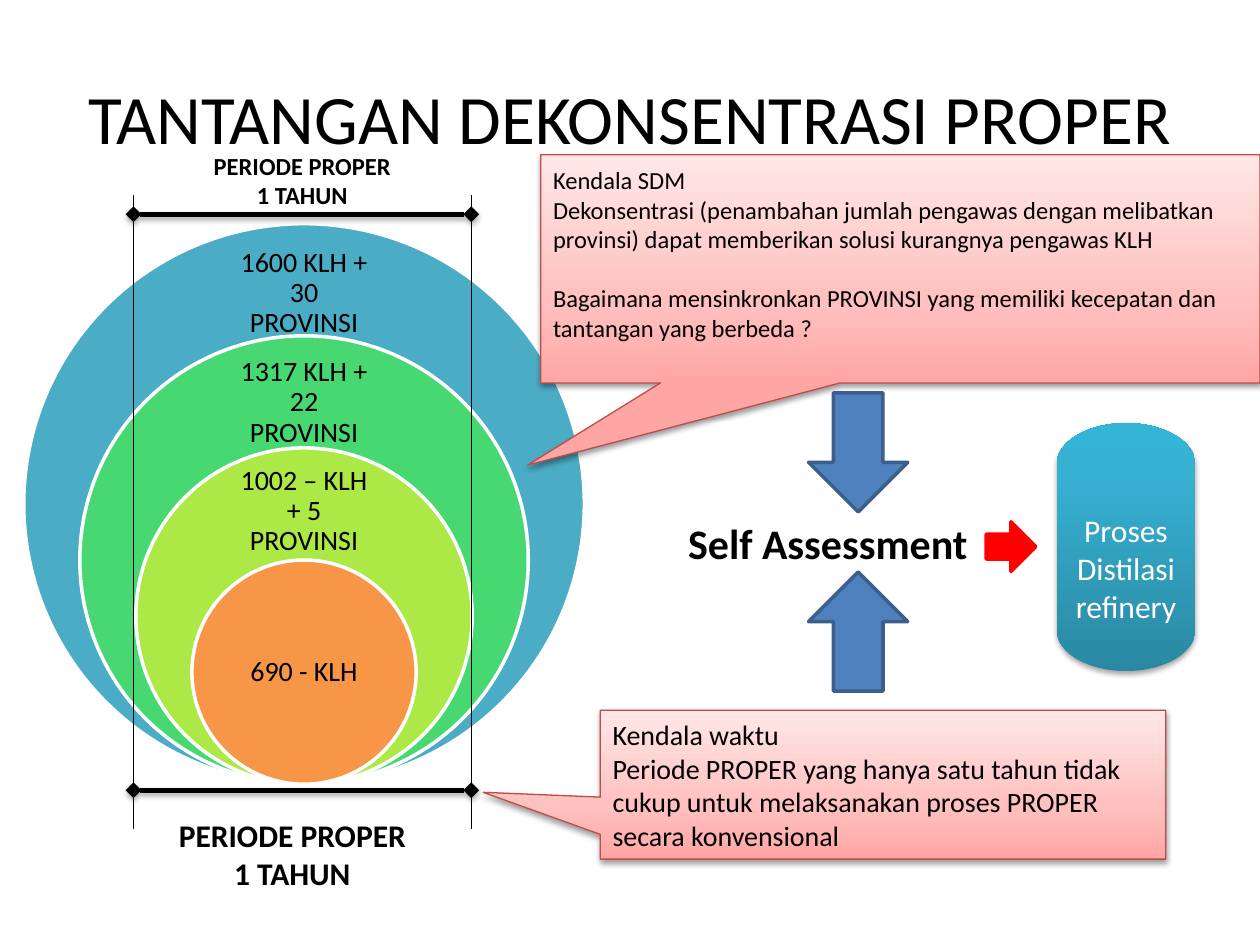
from lxml import etree
from pptx import Presentation
from pptx.dml.color import RGBColor
from pptx.enum.shapes import MSO_CONNECTOR, MSO_SHAPE
from pptx.enum.text import MSO_ANCHOR, PP_ALIGN
from pptx.oxml import parse_xml
from pptx.oxml.ns import nsdecls, qn
from pptx.util import Cm, Pt

OVAL = MSO_SHAPE.OVAL
CALLOUT = MSO_SHAPE.RECTANGULAR_CALLOUT
DISK = MSO_SHAPE.FLOWCHART_MAGNETIC_DISK
DOWN, RIGHT = MSO_SHAPE.DOWN_ARROW, MSO_SHAPE.RIGHT_ARROW
STRAIGHT = MSO_CONNECTOR.STRAIGHT
MIDDLE, TOP = MSO_ANCHOR.MIDDLE, MSO_ANCHOR.TOP
LEFT, CENTER = PP_ALIGN.LEFT, PP_ALIGN.CENTER


class Theme:
    font = "Calibri"
    black, white, red = "000000", "FFFFFF", "FF0000"
    rings = ("4BACC6", "47D872", "ACE946", "F79646")
    blue, navy, rose = "4F81BD", "3A5F8C", "BF4C48"
    pink = ((0, "FFA6A5"), (35, "FFC0BF"), (100, "FFE7E7"))
    teal = ((0, "2A88A2"), (80, "37B1D2"), (100, "34B4D6"))
    title, head, large, body, small = 39.6, 24, 18, 16, 14


def write(shape, text, size=Theme.body, color=Theme.black, bold=False, align=CENTER,
          anchor=MIDDLE, inset=None, spacing=None):
    """Put text in a shape, one paragraph for each line."""
    frame = shape.text_frame
    frame.word_wrap = True
    frame.vertical_anchor = anchor
    if inset is not None:
        frame.margin_left = frame.margin_right = Cm(inset)
        frame.margin_top = frame.margin_bottom = Cm(inset)
    frame.text = text
    for para in frame.paragraphs:
        para.alignment = align
        para.line_spacing = spacing
        font = para.runs[0].font
        font.name, font.size, font.bold = Theme.font, Pt(size), bold
        font.color.rgb = RGBColor.from_string(color)
    return frame


def draw(kind, box, fill, line=None, width=2, shade=None):
    """Add a shape with a plain or graded fill and an optional shadow."""
    shape = slide.shapes.add_shape(kind, *map(Cm, box))
    shape.shadow.inherit = False
    if isinstance(fill, str):
        shape.fill.solid()
        shape.fill.fore_color.rgb = RGBColor.from_string(fill)
    else:
        shape.fill.gradient()
        shape.fill.gradient_angle = 90
        stops = shape._element.spPr.find(".//" + qn("a:gsLst"))
        for stop in list(stops):
            stops.remove(stop)
        for pos, color in fill:
            stop = etree.SubElement(stops, qn("a:gs"), pos=str(pos * 1000))
            etree.SubElement(stop, qn("a:srgbClr"), val=color)
    if line:
        shape.line.color.rgb = RGBColor.from_string(line)
        shape.line.width = Pt(width)
    else:
        shape.line.fill.background()
    if shade:
        shape._element.spPr.find(qn("a:effectLst")).append(parse_xml(SHADOW % shade))
    return shape


SHADOW = (f'<a:outerShdw {nsdecls("a")} blurRad="40000" dist="%d" dir="5400000" '
          'rotWithShape="0"><a:srgbClr val="000000"><a:alpha val="%d"/>'
          '</a:srgbClr></a:outerShdw>')
SOFT, FIRM = (20000, 38000), (23000, 35000)

deck = Presentation()
deck.slide_width, deck.slide_height = Cm(25.4), Cm(19.05)
slide = deck.slides.add_slide(deck.slide_layouts[5])

# Title
title = slide.shapes.title
title.left, title.top, title.width, title.height = Cm(1.27), Cm(0.76), Cm(22.86), Cm(3.18)
write(title, "TANTANGAN DEKONSENTRASI PROPER", size=Theme.title)

# Nested rings, all resting on one base: text, label height, label drop
mid, base, step = 6.13, 15.81, 2.26
rings = (
    ("1600 KLH + 30 PROVINSI", 1.7, 0.56),
    ("1317 KLH + 22 PROVINSI", 1.62, 0.54),
    ("1002 – KLH + 5 PROVINSI", 1.53, 0.51),
    ("690 - KLH", 2.26, 1.13),
)
for i, (text, high, drop) in enumerate(rings):
    size = step * (5 - i)
    top = base - size
    draw(OVAL, (mid - size / 2, top, size, size), Theme.rings[i], Theme.white)
    label = slide.shapes.add_textbox(Cm(mid - 1.58), Cm(top + drop), Cm(3.16), Cm(high))
    write(label, text, inset=0.3, spacing=0.9)

# Callouts
staff = draw(CALLOUT, (10.9, 3.12, 14.5, 4.6), Theme.pink, Theme.rose, 0.75, SOFT)
staff.adjustments[0], staff.adjustments[1] = -0.518, 0.86
frame = write(staff, "Kendala SDM\n"
              "Dekonsentrasi (penambahan jumlah pengawas dengan melibatkan provinsi) "
              "dapat memberikan solusi kurangnya pengawas KLH\n"
              "Bagaimana mensinkronkan PROVINSI yang memiliki kecepatan dan "
              "tantangan yang berbeda ?", size=Theme.small, align=LEFT)
frame.paragraphs[2].space_before = Pt(17)
frame.margin_bottom = Cm(0.73)

time = draw(CALLOUT, (12.1, 14.32, 11.4, 3), Theme.pink, Theme.rose, 0.75, SOFT)
time.adjustments[0], time.adjustments[1] = -0.707, 0.051
write(time, "Kendala waktu\nPeriode PROPER yang hanya satu tahun tidak cukup untuk "
      "melaksanakan proses PROPER secara konvensional", align=LEFT)

# Arrows towards the self assessment
for top, turn in ((7.92, 0), (11.53, 180)):
    arrow = draw(DOWN, (16.3, top, 2, 2.4), Theme.blue, Theme.navy)
    arrow.rotation = turn

# Refinery and its arrow
disk = draw(DISK, (21.3, 8.53, 2.8, 5), Theme.teal, shade=FIRM)
write(disk, "Proses\nDistilasi\nrefinery", size=Theme.large, color=Theme.white)
draw(RIGHT, (19.88, 10.52, 1, 1), Theme.red, Theme.red)

# Period lines: two thin uprights, then two thick spans with diamond ends
west, east = 2.69, 9.5
lines = [(x, 16.71, x, 3.94, 0.75) for x in (west, east)]
lines += [(west, y, east, y, 3) for y in (4.32, 15.93)]
for *ends, width in lines:
    line = slide.shapes.add_connector(STRAIGHT, *map(Cm, ends))
    line.line.color.rgb = RGBColor.from_string(Theme.black)
    line.line.width = Pt(width)
    props = line._element.spPr
    effect = etree.SubElement(props, qn("a:effectLst"))
    if width == 3:
        for end in ("a:headEnd", "a:tailEnd"):
            etree.SubElement(props.find(qn("a:ln")), qn(end), type="diamond")
        effect.append(parse_xml(SHADOW % FIRM))

# Free labels
period = "PERIODE PROPER\n1 TAHUN"
labels = (
    (period, (3.3, 2.92, 5.59, 1.45), Theme.small),
    (period, (3.1, 16.33, 5.59, 1.8), Theme.large),
    ("Self Assessment", (13.49, 10.31, 6.4, 1.27), Theme.head),
)
for text, box, size in labels:
    label = slide.shapes.add_textbox(*map(Cm, box))
    write(label, text, size=size, bold=True, anchor=TOP)

deck.save("out.pptx")
